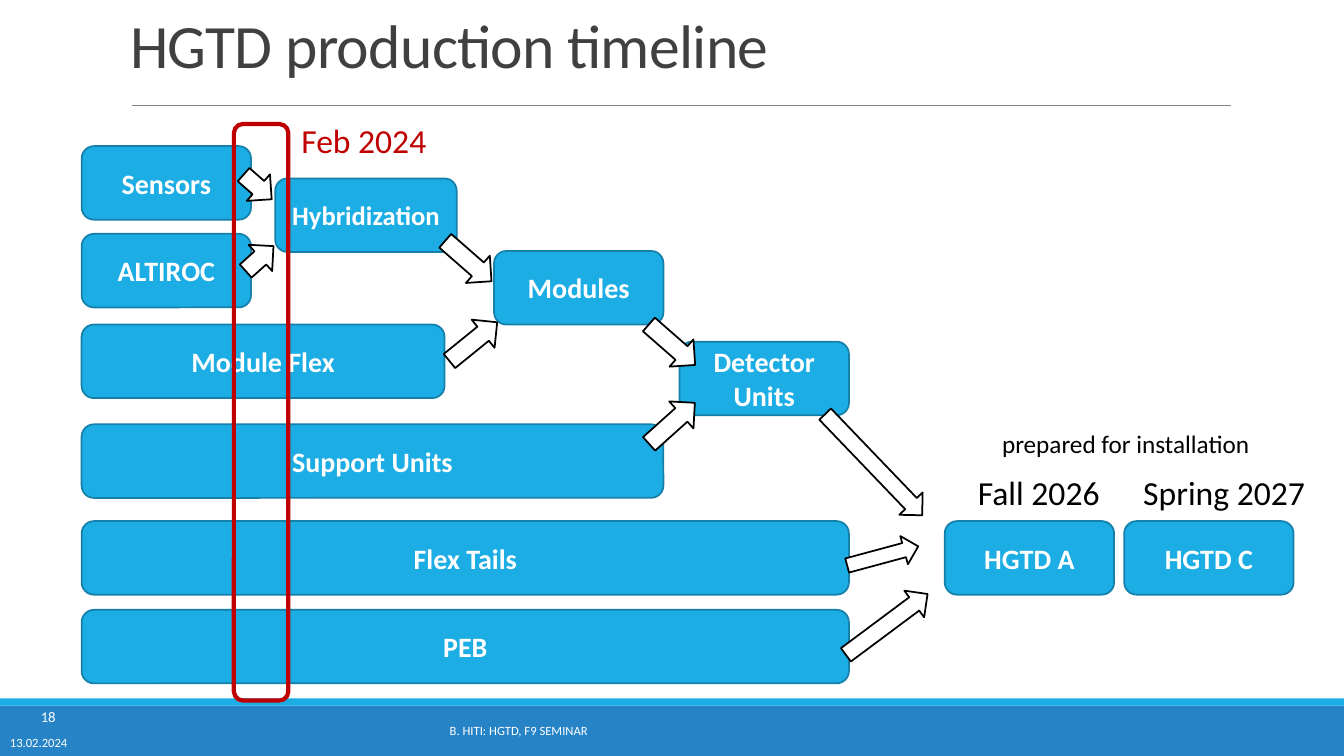
import pptx
import pptx.dml.color
import pptx.enum.shapes
import pptx.enum.text
import pptx.oxml.ns
import pptx.util
from lxml import etree

SHAPE = pptx.enum.shapes.MSO_SHAPE
ALIGN = pptx.enum.text.PP_ALIGN
ANCHOR = pptx.enum.text.MSO_ANCHOR
EMU_PER_PX = 9144  # 100 px to the inch

COLORS = {
    "sky": "1CADE4", "blue": "2683C6", "edge": "1580A9", "red": "C00000",
    "title": "404040", "rule": "808080", "white": "FFFFFF", "black": "000000",
}


class Deck:
    font = "Calibri"

    def __init__(self, width, height):
        self.prs = pptx.Presentation()
        self.prs.slide_width = self.px(width)
        self.prs.slide_height = self.px(height)
        self.s = self.prs.slides.add_slide(self.prs.slide_layouts[5])

    def px(self, n):
        return pptx.util.Emu(n * EMU_PER_PX)

    def box(self, *lengths):
        return [self.px(n) for n in lengths]

    def color(self, name):
        return pptx.dml.color.RGBColor.from_string(COLORS[name])

    def add_run(self, tf, text, size, color, align=ALIGN.LEFT, bold=False):
        p = tf.paragraphs[0]
        p.alignment = align
        r = p.add_run()
        r.text = text
        r.font.name = self.font
        r.font.size = pptx.util.Pt(size)
        r.font.bold = bold
        r.font.color.rgb = self.color(color)
        return r

    def title(self, text, x, y, w, h):
        sp = self.s.shapes.title
        sp.left, sp.top, sp.width, sp.height = self.box(x, y, w, h)
        tf = sp.text_frame
        tf.auto_size = pptx.enum.text.MSO_AUTO_SIZE.NONE
        tf.vertical_anchor = ANCHOR.BOTTOM
        r = self.add_run(tf, text, 44, "title")
        r.font._element.set("spc", "-50")
        tf.paragraphs[0].line_spacing = 0.85

    def shape(self, kind, x, y, w, h, fill=None, line=None, weight=1.25):
        sp = self.s.shapes.add_shape(kind, *self.box(x, y, w, h))
        sp.shadow.inherit = False
        if fill:
            sp.fill.solid()
            sp.fill.fore_color.rgb = self.color(fill)
        else:
            sp.fill.background()
        if line:
            sp.line.color.rgb = self.color(line)
            sp.line.width = pptx.util.Pt(weight)
        else:
            sp.line.fill.background()
        return sp

    def stage(self, text, x, y, w=168, size=20):
        sp = self.shape(SHAPE.ROUNDED_RECTANGLE, x, y, w, 73, "sky", "edge")
        tf = sp.text_frame
        tf.word_wrap = True
        tf.vertical_anchor = ANCHOR.MIDDLE
        self.add_run(tf, text, size, "white", ALIGN.CENTER, bold=True)

    def arrow(self, x, y, w, h, angle):
        sp = self.shape(SHAPE.RIGHT_ARROW, x, y, w, h, "white", "black")
        sp.rotation = angle

    def rule(self, x1, y1, x2, y2):
        ln = self.s.shapes.add_connector(
            pptx.enum.shapes.MSO_CONNECTOR.STRAIGHT, *self.box(x1, y1, x2, y2))
        ln.line.color.rgb = self.color("rule")
        ln.line.width = pptx.util.Pt(0.5)
        etree.SubElement(ln._element.spPr, pptx.oxml.ns.qn("a:effectLst"))

    def text(self, text, x, y, w, h, size, color, align=ALIGN.LEFT,
             anchor=ANCHOR.TOP, wrap=False):
        tf = self.s.shapes.add_textbox(*self.box(x, y, w, h)).text_frame
        tf.word_wrap = wrap
        tf.vertical_anchor = anchor
        self.add_run(tf, text, size, color, align)


def main():
    d = Deck(1333, 750)

    # Footer bands and title
    d.shape(SHAPE.RECTANGLE, 0, 700, 1333, 50, "blue")
    d.shape(SHAPE.RECTANGLE, 0, 693, 1333, 7, "sky")
    d.rule(131, 105, 1221, 105)
    d.title("HGTD production timeline", 119, -74, 1100, 159)

    # Components, all starting at the left edge
    for text, y, w in [("Sensors", 145, 168), ("ALTIROC", 232, 168),
                       ("Module Flex", 322, 360), ("Support Units", 421, 577),
                       ("Flex Tails", 517, 761), ("PEB", 605, 761)]:
        d.stage(text, 81, y, w)

    # Assembly steps
    d.stage("Hybridization", 273, 177, 180, 19)
    for text, x, y in [("Modules", 490, 249), ("Detector Units", 674, 339),
                       ("HGTD A", 937, 517), ("HGTD C", 1115, 517)]:
        d.stage(text, x, y)

    # Flow arrows
    for arrow in [(239, 239, 37, 35, 318.1), (237, 168, 37, 35, 41.2),
                  (434, 241, 61, 36, 41.2), (439, 321, 61, 36, 320.9),
                  (636, 324, 61, 36, 41.2), (636, 402, 61, 36, 318.1),
                  (797, 445, 139, 32, 46.2), (839, 537, 73, 29, 344.9),
                  (829, 603, 101, 33, 323.3)]:
        d.arrow(*arrow)

    # Current date marker
    d.shape(SHAPE.ROUNDED_RECTANGLE, 232, 123, 54, 572, line="red", weight=3)
    d.text("Feb 2024", 289, 114, 145, 50, 24, "red")

    # Installation dates
    d.text("Spring 2027", 1124, 463, 182, 50, 24, "black")
    d.text("Fall 2026", 960, 463, 142, 50, 24, "black")
    d.text("prepared for installation", 984, 420, 268, 40, 18, "black")

    # Footer text
    for text, x, y, w, h, size, align in [
            ("13.02.2024", 0, 724, 81, 26, 9, ALIGN.LEFT),
            ("B. HITI: HGTD, F9 SEMINAR", 121, 705, 787, 40, 9, ALIGN.CENTER),
            ("18", 0, 700, 65, 22, 10.5, ALIGN.RIGHT)]:
        d.text(text, x, y, w, h, size, "white", align, ANCHOR.MIDDLE, True)

    d.prs.save("out.pptx")


if __name__ == "__main__":
    main()
